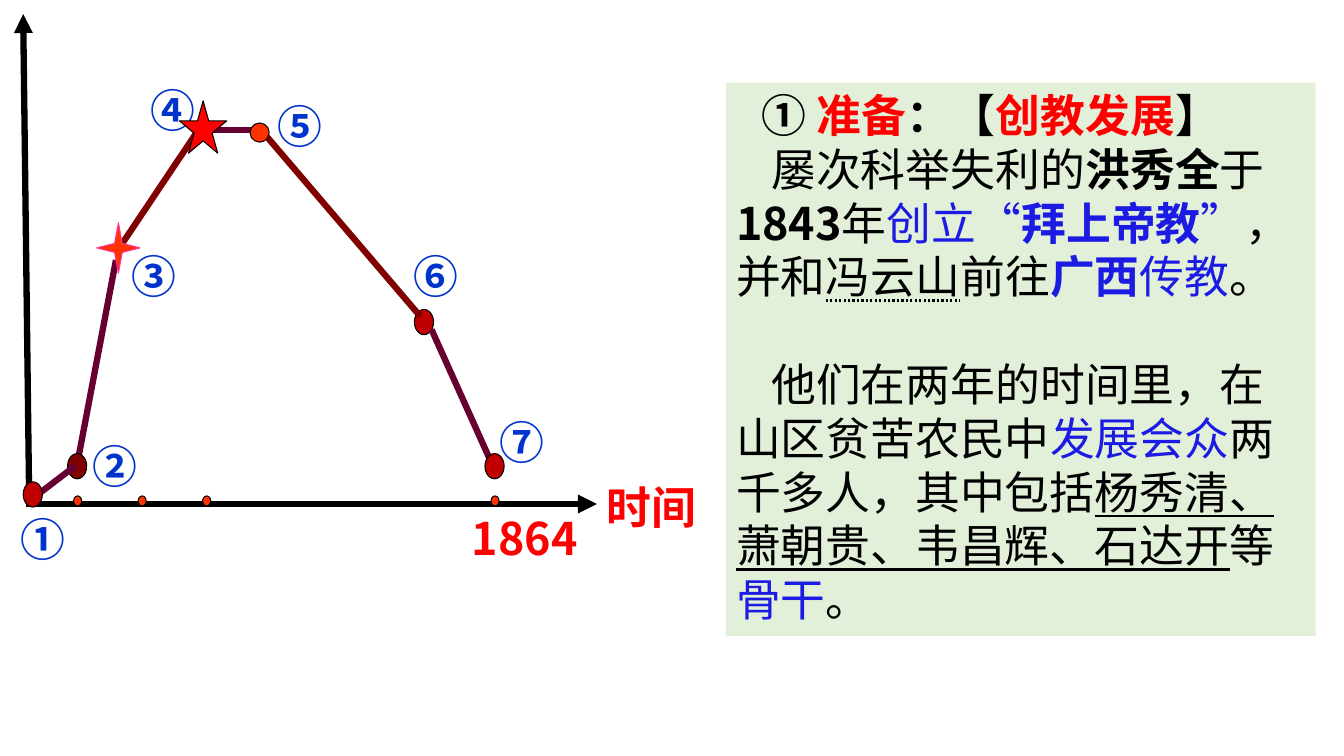
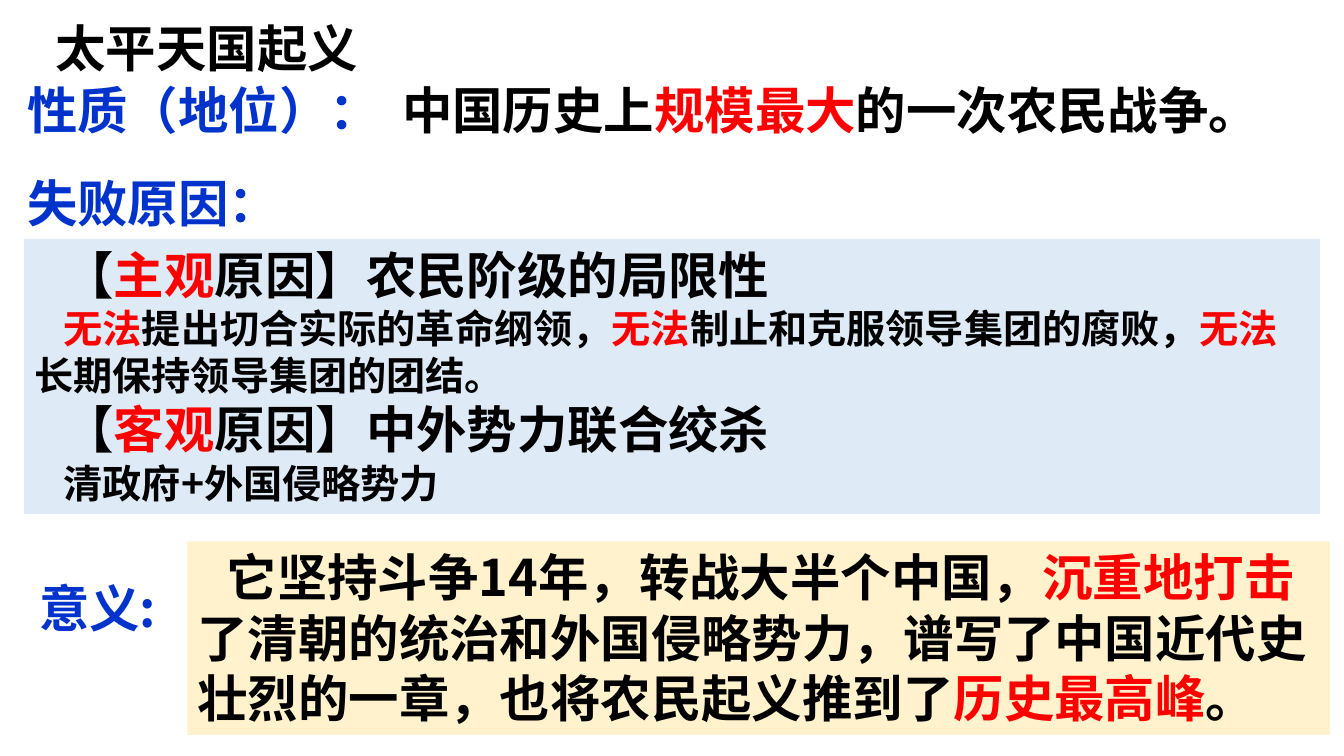
from dataclasses import dataclass
from typing import Optional, Sequence

from lxml import etree
from pptx import Presentation
from pptx.dml.color import RGBColor
from pptx.enum.shapes import MSO_CONNECTOR, MSO_SHAPE
from pptx.enum.text import MSO_ANCHOR, MSO_AUTO_SIZE, MSO_UNDERLINE, PP_ALIGN
from pptx.oxml.ns import qn
from pptx.util import Inches, Pt

STRAIGHT = MSO_CONNECTOR.STRAIGHT
DOT = MSO_SHAPE.FLOWCHART_CONNECTOR
STAR4 = MSO_SHAPE.STAR_4_POINT
STAR5 = MSO_SHAPE.STAR_5_POINT
SOLID = MSO_UNDERLINE.SINGLE_LINE
DOTTED = MSO_UNDERLINE.DOTTED_LINE
TITLE_AND_CONTENT = 1


@dataclass(frozen=True)
class Theme:
    font: str = "Noto Sans CJK SC"
    black: str = "000000"
    red: str = "FF0000"
    blue: str = "0033CC"
    bright_blue: str = "1B1BE3"
    orange: str = "FF3300"
    pink: str = "FF3399"
    crimson: str = "C00000"
    maroon: str = "800000"
    plum: str = "660033"
    green_panel: str = "E2F0D9"
    blue_panel: str = "DEEBF7"
    yellow_panel: str = "FFF2CC"
    small: float = 28
    medium: float = 32
    large: float = 36
    thick: float = 4.5
    thin: float = 0.75


THEME = Theme()


@dataclass(frozen=True)
class Span:
    text: str
    color: str = THEME.black
    bold: bool = True
    underline: Optional[MSO_UNDERLINE] = None


@dataclass(frozen=True)
class Para:
    spans: Sequence[Span]
    size: float = THEME.large
    indent: float = 0
    before: float = 0


@dataclass(frozen=True)
class Segment:
    start: tuple[float, float]
    end: tuple[float, float]
    color: str
    arrow: bool = False

    def draw(self, page) -> None:
        points = [Inches(value) for value in (*self.start, *self.end)]
        line = page.shapes.add_connector(STRAIGHT, *points)
        line.line.color.rgb = RGBColor.from_string(self.color)
        line.line.width = Pt(THEME.thick)
        if self.arrow:
            outline = line.line._get_or_add_ln()
            etree.SubElement(outline, qn("a:tailEnd"), type="triangle")
        etree.SubElement(line._element.spPr, qn("a:effectLst"))


@dataclass(frozen=True)
class Marker:
    left: float
    top: float
    color: str
    width: float = 0.19
    height: float = 0.25
    kind: MSO_SHAPE = DOT
    outline: str = THEME.black

    def draw(self, page) -> None:
        size = (self.left, self.top, self.width, self.height)
        shape = page.shapes.add_shape(self.kind, *map(Inches, size))
        shape.shadow.inherit = False
        shape.fill.solid()
        shape.fill.fore_color.rgb = RGBColor.from_string(self.color)
        shape.line.color.rgb = RGBColor.from_string(self.outline)
        shape.line.width = Pt(THEME.thin)
        if self.kind == STAR4:
            shape.adjustments[0] = 0.125


@dataclass(frozen=True)
class Label:
    text: str
    left: float
    top: float
    width: float = 0.78
    color: str = THEME.blue

    def draw(self, page) -> None:
        add_text(page, (self.left, self.top, self.width, 0.64),
                 [Para([Span(self.text, self.color)], THEME.medium)])


def write(box, place: tuple, paras: Sequence[Para], *,
          fill: Optional[str] = None, wrap: bool = True) -> None:
    """Move a box or placeholder and set its panel colour and text."""
    box.left, box.top, box.width, box.height = map(Inches, place)
    if fill:
        box.fill.solid()
        box.fill.fore_color.rgb = RGBColor.from_string(fill)
    frame = box.text_frame
    frame.auto_size = MSO_AUTO_SIZE.NONE
    frame.word_wrap = wrap
    frame.vertical_anchor = MSO_ANCHOR.TOP
    frame.margin_left = frame.margin_right = Inches(0.1)
    frame.margin_top = frame.margin_bottom = Inches(0.05)
    for index, para in enumerate(paras):
        target = frame.add_paragraph() if index else frame.paragraphs[0]
        target.alignment = PP_ALIGN.LEFT
        target.space_before = Pt(para.before)
        properties = target._p.get_or_add_pPr()
        properties.set("marL", "0")
        properties.set("indent", str(Inches(para.indent)))
        etree.SubElement(properties, qn("a:buNone"))
        for span in para.spans:
            run = target.add_run()
            run.text = span.text
            font = run.font
            font.size = Pt(para.size)
            font.bold = span.bold
            font.color.rgb = RGBColor.from_string(span.color)
            if span.underline:
                font.underline = span.underline
            font.name = THEME.font
            latin = run._r.rPr.find(qn("a:latin"))
            latin.addnext(latin.makeelement(qn("a:ea"), {"typeface": THEME.font}))


def add_text(page, place: tuple, paras: Sequence[Para], *,
             fill: Optional[str] = None, wrap: bool = True) -> None:
    box = page.shapes.add_textbox(*map(Inches, place))
    write(box, place, paras, fill=fill, wrap=wrap)


def plain(text: str, color: str = THEME.black,
          underline: Optional[MSO_UNDERLINE] = None) -> Span:
    return Span(text, color, False, underline)


def add_page(deck):
    return deck.slides.add_slide(deck.slide_layouts[TITLE_AND_CONTENT])


def build_timeline(deck) -> None:
    page = add_page(deck)
    title = page.shapes.title._element
    title.getparent().remove(title)

    axes = [
        Segment((0.26, 5), (5.92, 5), THEME.black, arrow=True),
        Segment((0.29, 5), (0.23, 0.14), THEME.black, arrow=True),
    ]
    ticks = [Marker(left, 4.92, THEME.orange, 0.08, 0.1)
             for left in (0.73, 1.37, 2.01, 4.87)]
    labels = [
        Label("时间", 5.92, 4.71, 1.28, THEME.red),
        Label("1864", 4.58, 5.02, 1.49, THEME.red),
        Label("①", 0.11, 5.03),
        Label("②", 0.82, 4.3),
        Label("③", 1.21, 2.42),
        Label("④", 1.39, 0.77),
        Label("⑤", 2.65, 0.93),
        Label("⑥", 4, 2.42),
        Label("⑦", 4.86, 4.07),
    ]
    curve = [
        Segment((1.21, 2.42), (1.96, 1.3), THEME.maroon),
        Segment((0.78, 4.53), (1.15, 2.58), THEME.plum),
        Marker(0.96, 2.21, THEME.orange, 0.43, 0.5, STAR4, THEME.pink),
        Segment((2.01, 1.29), (2.54, 1.29), THEME.plum),
        Marker(4.11, 3.07, THEME.crimson),
        Segment((2.65, 1.36), (4.17, 3.14), THEME.maroon),
        Segment((4.28, 3.27), (4.86, 4.56), THEME.plum),
        Marker(4.81, 4.5, THEME.crimson),
        Marker(0.67, 4.5, THEME.maroon),
        Marker(1.78, 1, THEME.red, 0.47, 0.52, STAR5),
        Marker(2.48, 1.22, THEME.orange, 0.19, 0.19),
        Segment((0.33, 4.94), (0.75, 4.62), THEME.plum),
        Marker(0.23, 4.78, THEME.crimson),
    ]
    for item in axes + ticks + labels + curve:
        item.draw(page)

    heading = [
        Span("① "), Span("准备", THEME.red), Span("：【"),
        Span("创教发展", THEME.red), Span("】"),
    ]
    founding = [
        plain("屡次科举失利的"), Span("洪秀全"), plain("于"), Span("1843"),
        plain("年"), plain("创立“", THEME.bright_blue),
        Span("拜上帝教", THEME.bright_blue), plain("”", THEME.bright_blue),
        plain("，并和"), plain("冯云山", underline=DOTTED), plain("前往"),
        Span("广西", THEME.bright_blue), plain("传教", THEME.bright_blue),
        plain("。"),
    ]
    followers = [
        plain("他们在两年的时间里，在山区贫苦农民中"),
        plain("发展会众", THEME.bright_blue), plain("两千多人，其中包括"),
        plain("杨秀清、萧朝贵、韦昌辉、石达开", underline=SOLID),
        plain("等"), plain("骨干", THEME.bright_blue), plain("。"),
    ]
    write(page.placeholders[1], (7.2, 0.82, 5.85, 5.49), [
        Para(heading, THEME.medium, 0.25),
        Para(founding, THEME.medium, 0.35),
        Para(followers, THEME.medium, 0.35, before=38.5),
    ], fill=THEME.green_panel)


def build_summary(deck) -> None:
    page = add_page(deck)
    indent = 0.29
    write(page.shapes.title, (0.16, 0.12, 13.02, 0.71),
          [Para([Span("太平天国起义")], indent=indent)])

    for text, left, top, width in (
        ("性质（地位）：", 0.17, 0.74, 3.71),
        ("失败原因：", 0.17, 1.66, 2.71),
        ("意义:", 0.29, 5.68, 2.64),
    ):
        add_text(page, (left, top, width, 0.71),
                 [Para([Span(text, THEME.blue)])], wrap=False)
    add_text(page, (3.89, 0.74, 8.74, 0.71), [Para([
        Span("中国历史上"), Span("规模最大", THEME.red),
        Span("的一次农民战争。"),
    ])], wrap=False)

    unable = Span("无法", THEME.red)
    limits = [
        unable, Span("提出切合实际的革命纲领，"),
        unable, Span("制止和克服领导集团的腐败，"),
        unable, Span("长期保持领导集团的团结。"),
    ]
    reasons = []
    for kind, cause, detail in (
        ("主观", "农民阶级的局限性", limits),
        ("客观", "中外势力联合绞杀", [Span("清政府+外国侵略势力")]),
    ):
        heading = [Span("【"), Span(kind, THEME.red), Span(f"原因】{cause}")]
        reasons += [Para(heading, indent=indent),
                    Para(detail, THEME.small, indent)]
    write(page.placeholders[1], (0.24, 2.37, 12.85, 2.73), reasons,
          fill=THEME.blue_panel)

    significance = [
        Span("它坚持斗争14年，转战大半个中国，"), Span("沉重地打击", THEME.red),
        Span("了清朝的统治和外国侵略势力，谱写了中国近代史壮烈的一章，"
             "也将农民起义推到了"),
        Span("历史最高峰", THEME.red), Span("。"),
    ]
    add_text(page, (1.86, 5.37, 11.33, 1.92),
             [Para(significance, indent=indent)], fill=THEME.yellow_panel)


def main() -> None:
    deck = Presentation()
    deck.slide_width = Inches(13.33)
    deck.slide_height = Inches(7.5)
    build_timeline(deck)
    build_summary(deck)
    deck.save("out.pptx")


if __name__ == "__main__":
    main()
